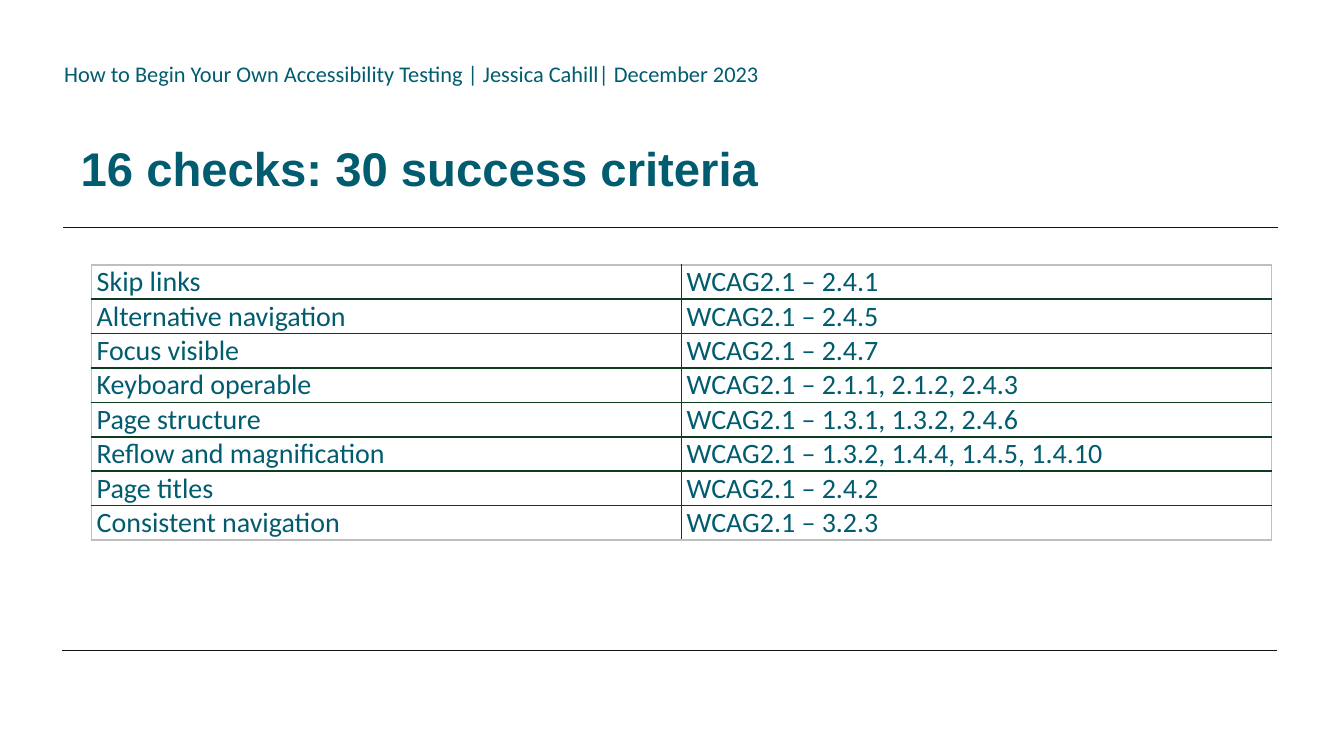
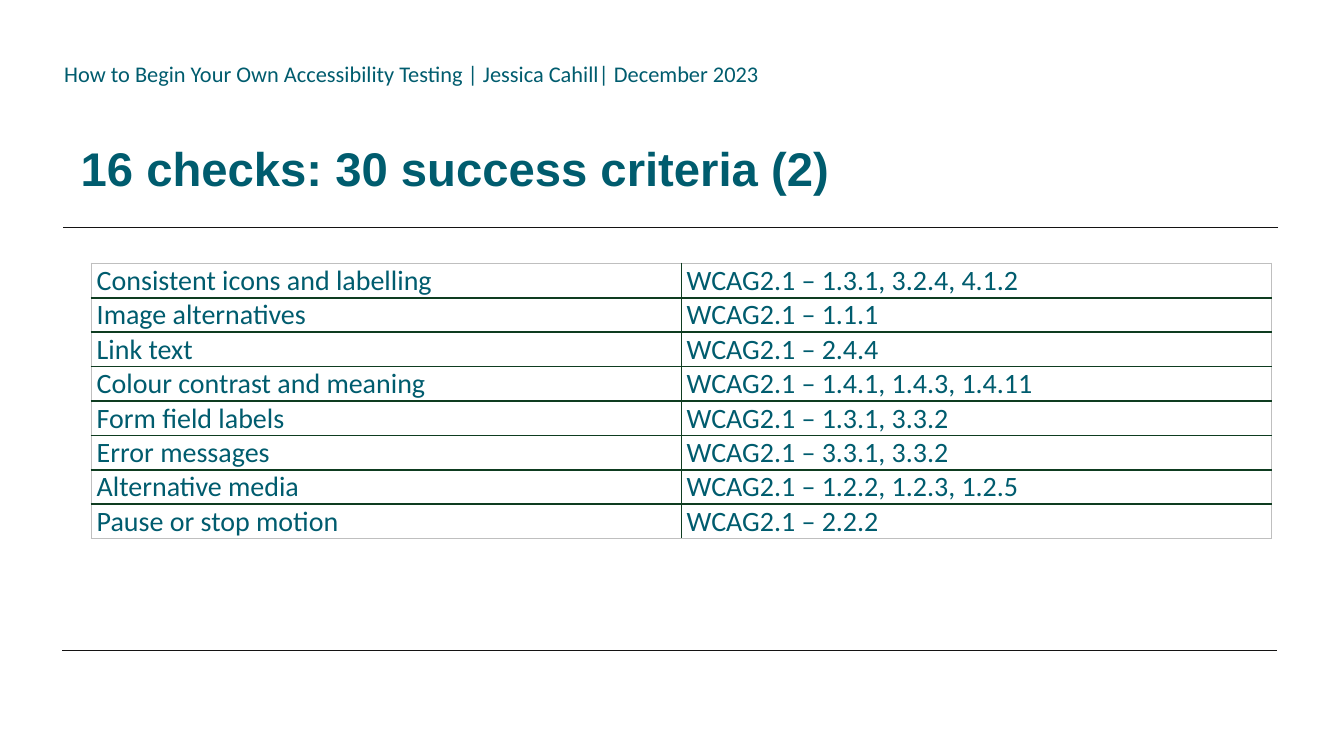
from dataclasses import dataclass

from pptx import Presentation
from pptx.dml.color import RGBColor
from pptx.enum.shapes import MSO_CONNECTOR
from pptx.enum.text import MSO_ANCHOR, MSO_AUTO_SIZE, PP_ALIGN
from pptx.oxml.ns import qn
from pptx.util import Inches, Pt
from lxml.etree import SubElement

# Shared look
COLORS = {"teal": "005C6E", "rule": "141313", "inner": "0E3C20", "outer": "BFBFBF"}
HEADER = "How to Begin Your Own Accessibility Testing | Jessica Cahill| December 2023"
ROW = 0.25
COLUMN = 4.39


@dataclass
class Rule:
    left: float
    right: float
    top: float


@dataclass
class Page:
    title: str
    top: float
    checks: list[tuple[str, str]]


RULES = [Rule(0.47, 9.51, 1.69), Rule(0.46, 9.5, 4.84)]

# Each check with the criteria it covers
PAGES = [
    Page("16 checks: 30 success criteria", 1.97, [
        ("Skip links", "2.4.1"),
        ("Alternative navigation", "2.4.5"),
        ("Focus visible", "2.4.7"),
        ("Keyboard operable", "2.1.1, 2.1.2, 2.4.3"),
        ("Page structure", "1.3.1, 1.3.2, 2.4.6"),
        ("Reflow and magnification", "1.3.2, 1.4.4, 1.4.5, 1.4.10"),
        ("Page titles", "2.4.2"),
        ("Consistent navigation", "3.2.3"),
    ]),
    Page("16 checks: 30 success criteria (2)", 1.96, [
        ("Consistent icons and labelling", "1.3.1, 3.2.4, 4.1.2"),
        ("Image alternatives", "1.1.1"),
        ("Link text", "2.4.4"),
        ("Colour contrast and meaning", "1.4.1, 1.4.3, 1.4.11"),
        ("Form field labels", "1.3.1, 3.3.2"),
        ("Error messages", "3.3.1, 3.3.2"),
        ("Alternative media", "1.2.2, 1.2.3, 1.2.5"),
        ("Pause or stop motion", "2.2.2"),
    ]),
]


def write(frame, text: str, *, size: float, font: str = "Calibri",
          color: str = "teal", bold: bool = False) -> None:
    line = frame.paragraphs[0]
    line.alignment = PP_ALIGN.LEFT
    run = line.add_run()
    run.text = text
    run.font.size = Pt(size)
    run.font.name = font
    run.font.bold = bold
    run.font.color.rgb = RGBColor.from_string(COLORS[color])


def add_rule(slide, rule: Rule) -> None:
    line = slide.shapes.add_connector(
        MSO_CONNECTOR.STRAIGHT, Inches(rule.right), Inches(rule.top),
        Inches(rule.left), Inches(rule.top))
    line.line.color.rgb = RGBColor.from_string(COLORS["rule"])
    line.line.width = Pt(0.5)
    SubElement(line._element.spPr, qn("a:effectLst"))


def add_frame(slide, title: str) -> None:
    """Draw the header, both rules and the title."""
    box = slide.shapes.add_textbox(Inches(0.38), Inches(0.4), Inches(5.93), Inches(0.3))
    box.text_frame.word_wrap = True
    box.text_frame.auto_size = MSO_AUTO_SIZE.SHAPE_TO_FIT_TEXT
    write(box.text_frame, HEADER, size=12)
    for rule in RULES:
        add_rule(slide, rule)

    head = slide.shapes.title
    head.left, head.top = Inches(0.5), Inches(0.77)
    head.width, head.height = Inches(8.28), Inches(0.74)
    head.text_frame.auto_size = MSO_AUTO_SIZE.NONE
    head.text_frame.vertical_anchor = MSO_ANCHOR.BOTTOM
    write(head.text_frame, title, size=25.3, font="Arial", bold=True)


def set_border(cell, side: str, color: str) -> None:
    line = SubElement(cell._tc.get_or_add_tcPr(), qn(f"a:ln{side}"), w=str(Pt(1)))
    fill = SubElement(line, qn("a:solidFill"))
    SubElement(fill, qn("a:srgbClr"), val=COLORS[color])


def add_checks(slide, page: Page) -> None:
    count = len(page.checks)
    table = slide.shapes.add_table(
        count, 2, Inches(0.68), Inches(page.top),
        Inches(2 * COLUMN), Inches(count * ROW)).table
    table.first_row = table.horz_banding = False
    for y, (check, codes) in enumerate(page.checks):
        for x, text in enumerate((check, f"WCAG2.1 – {codes}")):
            cell = table.cell(y, x)
            cell.margin_left = cell.margin_right = Inches(0.04)
            cell.margin_top = cell.margin_bottom = Pt(0.2)
            # The rim is pale, the inner grid dark
            rim = {"L": x == 0, "R": x == 1, "T": y == 0, "B": y == count - 1}
            for side, edge in rim.items():
                set_border(cell, side, "outer" if edge else "inner")
            cell.fill.background()
            write(cell.text_frame, text, size=15)


def main() -> None:
    deck = Presentation()
    # Widescreen, 16 to 9
    deck.slide_width = Inches(10)
    deck.slide_height = Inches(10 * 9 / 16)
    for page in PAGES:
        slide = deck.slides.add_slide(deck.slide_layouts[5])
        add_frame(slide, page.title)
        add_checks(slide, page)
    deck.save("out.pptx")


if __name__ == "__main__":
    main()
